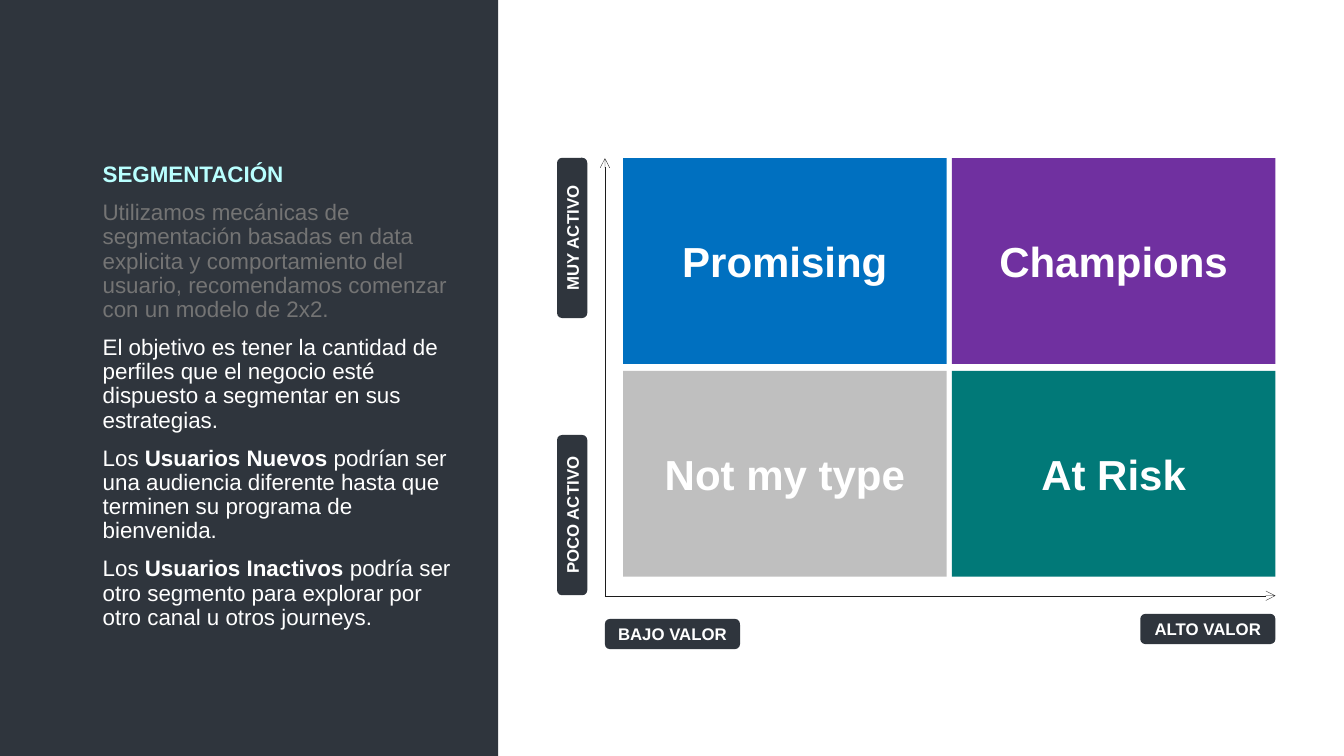
from lxml import etree
from pptx import Presentation
from pptx import util as u
from pptx.dml.color import RGBColor
from pptx.enum import shapes, text
from pptx.oxml import ns

PX = 9144  # EMU per px, 100 px to the inch
WIDTH, HEIGHT = 1333, 750

SLATE = RGBColor(0x2F, 0x35, 0x3D)
WHITE = RGBColor(0xFF, 0xFF, 0xFF)
AQUA = RGBColor(0xB9, 0xFF, 0xFF)
GREY = RGBColor(0x74, 0x74, 0x74)
INK = RGBColor(0x1C, 0x1C, 0x1C)
BLUE = RGBColor(0x00, 0x70, 0xC0)
PURPLE = RGBColor(0x70, 0x30, 0xA0)
SILVER = RGBColor(0xBF, 0xBF, 0xBF)
TEAL = RGBColor(0x01, 0x79, 0x78)


class SlideKit:
    font = "Arial"

    def __init__(self, deck):
        self.slide = deck.slides.add_slide(deck.slide_layouts[6])

    def run(self, paragraph, words, size, color, bold):
        run = paragraph.add_run()
        run.text = words
        run.font.name = self.font
        run.font.size = u.Pt(size)
        run.font.bold = bold
        run.font.color.rgb = color

    def block(self, box, fill, words="", size=12, rounded=False, rotation=0):
        kind = shapes.MSO_SHAPE.ROUNDED_RECTANGLE if rounded else shapes.MSO_SHAPE.RECTANGLE
        block = self.slide.shapes.add_shape(kind, *(v * PX for v in box))
        block.shadow.inherit = False
        block.fill.solid()
        block.fill.fore_color.rgb = fill
        block.line.fill.background()
        block.rotation = rotation
        if words:
            frame = block.text_frame
            frame.vertical_anchor = text.MSO_ANCHOR.MIDDLE
            frame.paragraphs[0].alignment = text.PP_ALIGN.CENTER
            self.run(frame.paragraphs[0], words, size, WHITE, True)

    def prose(self, box, paragraphs, size):
        frame = self.slide.shapes.add_textbox(*(v * PX for v in box)).text_frame
        frame.word_wrap = True
        for i, runs in enumerate(paragraphs):
            paragraph = frame.add_paragraph() if i else frame.paragraphs[0]
            paragraph.line_spacing = 0.9
            if i:
                paragraph.space_before = u.Pt(10)
            for words, color, bold in runs:
                self.run(paragraph, words, size, color, bold)

    def arrow(self, start, end):
        arrow = self.slide.shapes.add_connector(
            shapes.MSO_CONNECTOR.STRAIGHT, *(v * PX for v in start + end))
        arrow.line.color.rgb = INK
        arrow.line.width = u.Pt(0.25)
        etree.SubElement(arrow.line._get_or_add_ln(), ns.qn("a:tailEnd"), type="arrow")
        etree.SubElement(arrow._element.spPr, ns.qn("a:effectLst"))


def main():
    deck = Presentation()
    deck.slide_width, deck.slide_height = WIDTH * PX, HEIGHT * PX
    kit = SlideKit(deck)

    # Side panel with the explanation
    kit.block((0, 0, 494, HEIGHT), SLATE)
    kit.prose((92, 157, 370, 518), [
        [("SEGMENTACIÓN", AQUA, True)],
        [("Utilizamos mecánicas de segmentación basadas en data explicita y "
          "comportamiento del usuario, recomendamos comenzar con un modelo de 2x2.",
          GREY, False)],
        [("El objetivo es tener la cantidad de perfiles que el negocio esté "
          "dispuesto a segmentar en sus estrategias.", WHITE, False)],
        [("Los ", WHITE, False), ("Usuarios Nuevos ", WHITE, True),
         ("podrían ser una audiencia diferente hasta que terminen su programa "
          "de bienvenida.", WHITE, False)],
        [("Los ", WHITE, False), ("Usuarios Inactivos ", WHITE, True),
         ("podría ser otro segmento para explorar por otro canal u otros journeys.",
          WHITE, False)],
    ], 16)

    # Segment matrix, two by two
    left, top, cell_w, cell_h = 618, 157, 321, 204
    step_x, step_y = 326, 211
    segments = [
        [("Promising", BLUE), ("Champions", PURPLE)],
        [("Not my type", SILVER), ("At Risk", TEAL)],
    ]
    for row, pair in enumerate(segments):
        for col, (segment, fill) in enumerate(pair):
            cell = (left + col * step_x, top + row * step_y, cell_w, cell_h)
            kit.block(cell, fill, segment, size=30)

    # Activity and value axes
    origin = (600, 591)
    right = left + step_x + cell_w
    kit.arrow(origin, (origin[0], top))
    kit.arrow(origin, (right, origin[1]))

    # Axis labels
    label_h, value_w, activity_w = 30, 134, 159
    for label, x, y in (("BAJO VALOR", origin[0], 614), ("ALTO VALOR", right - value_w, 609)):
        kit.block((x, y, value_w, label_h), SLATE, label, rounded=True)
    for label, y in (("MUY ACTIVO", 221), ("POCO ACTIVO", 496)):
        kit.block((488, y, activity_w, label_h), SLATE, label, rounded=True, rotation=270)

    deck.save("out.pptx")


if __name__ == "__main__":
    main()
